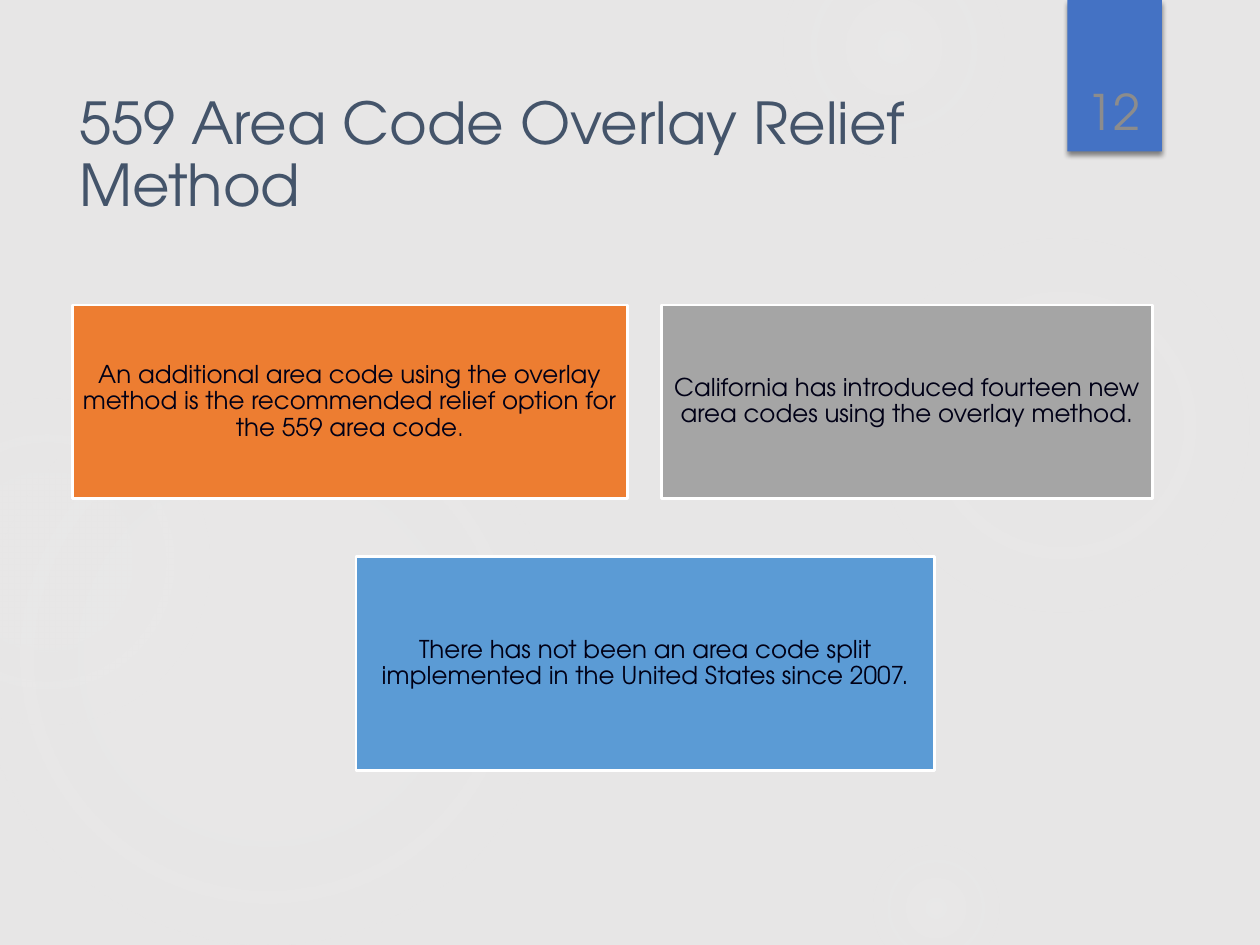
from lxml.etree import SubElement
from pptx import Presentation
from pptx.dml.color import RGBColor
from pptx.enum.shapes import MSO_SHAPE
from pptx.enum.text import MSO_ANCHOR, PP_ALIGN
from pptx.oxml import parse_xml
from pptx.oxml.ns import nsdecls, qn
from pptx.util import Pt

COLORS = {
    "background": "E7E6E6", "glow": "F5F5F5", "ribbon": "4472C4",
    "title": "44546A", "number": "8C8C8C", "body": "000016",
    "border": "FFFFFF", "shadow": "000000",
    "orange": "ED7D31", "gray": "A5A5A5", "blue": "5B9BD5",
}


class SlideBuilder:
    """Holds the style and the current slide."""

    font_name = "TeX Gyre Adventor"

    def __init__(self, slide):
        self.slide = slide
        slide.background.fill.solid()
        slide.background.fill.fore_color.rgb = self.color("background")

    def color(self, name):
        return RGBColor.from_string(COLORS[name])

    def shape(self, kind, bounds, fill=None):
        shape = self.slide.shapes.add_shape(kind, *map(Pt, bounds))
        shape.shadow.inherit = False
        shape.line.fill.background()
        if fill:
            shape.fill.solid()
            shape.fill.fore_color.rgb = self.color(fill)
        return shape

    def glow(self, left, top, diameter, stops):
        orb = self.shape(MSO_SHAPE.OVAL, (left, top, diameter, diameter))
        stop_xml = "".join(
            f'<a:gs pos="{position * 1000}"><a:srgbClr val="{COLORS["glow"]}">'
            f'<a:alpha val="{alpha * 1000}"/></a:srgbClr></a:gs>'
            for position, alpha in stops
        )
        gradient = parse_xml(
            f'<a:gradFill {nsdecls("a")} rotWithShape="1"><a:gsLst>{stop_xml}</a:gsLst>'
            '<a:path path="circle"><a:fillToRect l="50000" t="50000" r="50000" b="50000"/>'
            '</a:path></a:gradFill>'
        )
        orb.element.spPr.find(qn("a:prstGeom")).addnext(gradient)

    def ribbon(self, bounds):
        ribbon = self.shape(MSO_SHAPE.RECTANGLE, bounds, "ribbon")
        effects = ribbon.element.spPr.find(qn("a:effectLst"))
        shadow = SubElement(effects, qn("a:outerShdw"), blurRad=str(Pt(3)),
                            dist=str(Pt(2)), dir="5400000", rotWithShape="0")
        tint = SubElement(shadow, qn("a:srgbClr"), val=COLORS["shadow"])
        SubElement(tint, qn("a:alpha"), val="45000")

    def fill_text(self, frame, text, size, color, align, anchor, spacing):
        frame.word_wrap = True
        frame.vertical_anchor = anchor
        paragraph = frame.paragraphs[0]
        paragraph.alignment = align
        paragraph.line_spacing = spacing
        paragraph.font.name = self.font_name
        paragraph.font.size = Pt(size)
        paragraph.font.color.rgb = self.color(color)
        paragraph.add_run().text = text
        return paragraph

    def text(self, bounds, text, size, color, align, anchor, spacing=1.0):
        box = self.slide.shapes.add_textbox(*map(Pt, bounds))
        return self.fill_text(box.text_frame, text, size, color, align, anchor, spacing)

    def card(self, bounds, fill, text):
        card = self.shape(MSO_SHAPE.RECTANGLE, bounds, fill)
        card.line.color.rgb = self.color("border")
        card.line.width = Pt(1.5)
        frame = card.text_frame
        frame.margin_left = frame.margin_right = Pt(6)
        frame.margin_top = frame.margin_bottom = Pt(6)
        return self.fill_text(frame, text, 14, "body", PP_ALIGN.CENTER,
                              MSO_ANCHOR.MIDDLE, 0.9)


def main():
    presentation = Presentation()
    presentation.slide_width, presentation.slide_height = Pt(720), Pt(540)
    builder = SlideBuilder(presentation.slides.add_slide(presentation.slide_layouts[6]))

    glows = [
        (496, 132, 222, [(0, 7), (36, 6), (69, 0)]),
        (448, -36, 126, [(0, 14), (36, 7), (73, 0)]),
        (496, 480, 78, [(0, 14), (36, 7), (66, 0)]),
        (-12, 210, 330, [(0, 11), (36, 10), (75, 0)]),
        (-66, 228, 186, [(0, 8), (36, 8), (72, 0)]),
    ]
    for glow in glows:
        builder.glow(*glow)

    builder.ribbon((610, 0, 54, 86.5))
    builder.text((38.2, 49.7, 546.5, 80), "559 Area Code Overlay Relief Method",
                 33, "title", PP_ALIGN.LEFT, MSO_ANCHOR.MIDDLE, 0.9)
    number = builder.text((611.5, 23, 49.7, 60.5), "12", 28, "number",
                          PP_ALIGN.CENTER, MSO_ANCHOR.BOTTOM)
    number.space_after = Pt(6)

    row_top, row_height = 174.3, 110.5
    recommendation = builder.card(
        (41.3, row_top, 317.2, row_height), "orange",
        "An additional area code using the overlay method is the recommended "
        "relief option for the 559 area code")
    period = recommendation.add_run()
    period.text = "."
    period.font.size = Pt(13)
    builder.card((378, row_top, 280.8, row_height), "gray",
                 "California has introduced fourteen new area codes using the overlay method.")
    builder.card((203.4, 318, 330.8, 122.2), "blue",
                 "There has not been an area code split implemented in the "
                 "United States since 2007.")

    presentation.save("out.pptx")


if __name__ == "__main__":
    main()
